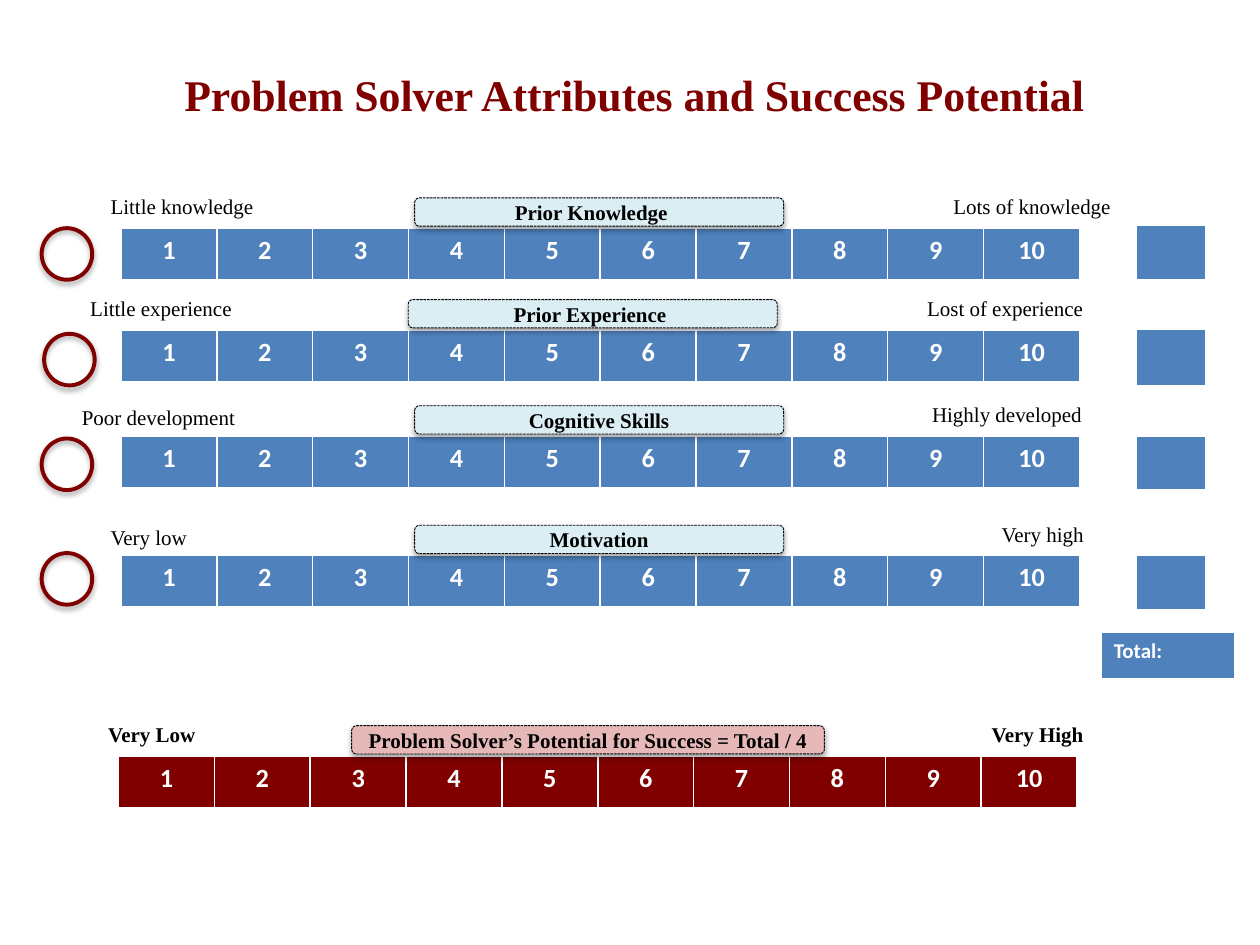
from dataclasses import dataclass
from typing import Optional

from lxml import etree
from pptx import Presentation
from pptx import util as u
from pptx.dml.color import RGBColor
from pptx.enum import dml, shapes, text
from pptx.oxml.ns import qn


@dataclass(frozen=True)
class Theme:
    blue: str = "4F81BD"
    red: str = "800000"
    pale: str = "DBEEF4"
    pink: str = "E6B9B8"
    black: str = "000000"
    white: str = "FFFFFF"
    serif: str = "Times New Roman"
    sans: str = "Calibri"
    title: float = 25
    digit: float = 15
    body: float = 12


@dataclass(frozen=True)
class Label:
    words: str
    left: float
    top: float
    width: float


@dataclass(frozen=True)
class Pill:
    words: str
    left: float = 8.36
    width: float = 7.44
    shift: float = 0


@dataclass(frozen=True)
class Score:
    ring: tuple[float, float]
    top: float
    height: float = 1.09


@dataclass(frozen=True)
class Scale:
    top: float
    pill: Pill
    low: Label
    high: Label
    score: Optional[Score] = None
    left: float = 2.44


LOOK = Theme()

SCALES = [
    Scale(4.6, Pill("Prior Knowledge", shift=0.32),
          Label("Little knowledge", 1.98, 3.78, 3.43),
          Label("Lots of knowledge", 18.97, 3.78, 3.71),
          Score((0.84, 4.6), 4.55)),
    Scale(6.65, Pill("Prior Experience", left=8.23, shift=0.11),
          Label("Little experience", 1.57, 5.84, 3.4),
          Label("Lost of experience", 18.44, 5.84, 3.68),
          Score((0.89, 6.73), 6.63, 1.14)),
    Scale(8.79, Pill("Cognitive Skills"),
          Label("Poor development", 1.4, 8.03, 3.63),
          Label("Highly developed", 18.54, 7.98, 3.58),
          Score((0.84, 8.84), 8.79)),
    Scale(11.2, Pill("Motivation"),
          Label("Very low", 1.98, 10.44, 2.06),
          Label("Very high", 19.94, 10.39, 2.18),
          Score((0.84, 11.15), 11.2)),
]

RESULT = Scale(15.24, Pill("Problem Solver’s Potential for Success = Total / 4", 7.09, 9.53),
               Label("Very Low", 1.93, 14.43, 2.29),
               Label("Very High", 19.74, 14.43, 2.41), left=2.39)


def cm(*sizes: float) -> list[u.Length]:
    return [u.Cm(size) for size in sizes]


def tint(code: str) -> RGBColor:
    return RGBColor.from_string(code)


def write(frame, words: str, *, size: float = LOOK.body, font: str = LOOK.serif,
          color: str = LOOK.black, bold: bool = False,
          align=text.PP_ALIGN.LEFT) -> None:
    line = frame.paragraphs[0]
    line.alignment = align
    run = line.add_run()
    run.text = words
    run.font.size = u.Pt(size)
    run.font.name = font
    run.font.bold = bold
    run.font.color.rgb = tint(color)


def shade(shape) -> None:
    shape.shadow.inherit = False
    effects = shape._element.spPr.find(qn("a:effectLst"))
    outer = etree.SubElement(effects, qn("a:outerShdw"), blurRad="40000",
                             dist="23000", dir="5400000", rotWithShape="0")
    color = etree.SubElement(outer, qn("a:srgbClr"), val=LOOK.black)
    etree.SubElement(color, qn("a:alpha"), val="35000")


def draw_grid(slide, left: float, top: float, width: float, height: float,
              fill: str, words: list[str], **style) -> None:
    grid = slide.shapes.add_table(1, len(words), *cm(left, top, width, height)).table
    for cell, word in zip(grid.rows[0].cells, words):
        cell.fill.solid()
        cell.fill.fore_color.rgb = tint(fill)
        if word:
            write(cell.text_frame, word, font=LOOK.sans, color=LOOK.white,
                  bold=True, **style)


def draw_label(slide, label: Label, bold: bool) -> None:
    box = slide.shapes.add_textbox(*cm(label.left, label.top, label.width, 0.77))
    frame = box.text_frame
    frame.word_wrap = False
    frame.auto_size = text.MSO_AUTO_SIZE.SHAPE_TO_FIT_TEXT
    write(frame, label.words, bold=bold)


def draw_pill(slide, pill: Pill, top: float, fill: str) -> None:
    shape = slide.shapes.add_shape(shapes.MSO_SHAPE.ROUNDED_RECTANGLE,
                                   *cm(pill.left, top, pill.width, 0.57))
    shape.fill.solid()
    shape.fill.fore_color.rgb = tint(fill)
    shape.line.color.rgb = tint(LOOK.black)
    shape.line.width = u.Pt(0.5)
    shape.line.dash_style = dml.MSO_LINE.SQUARE_DOT
    etree.SubElement
    shade(shape)
    frame = shape.text_frame
    frame.word_wrap = True
    frame.vertical_anchor = text.MSO_ANCHOR.MIDDLE
    frame.margin_top = frame.margin_bottom = frame.margin_left = 0
    frame.margin_right = u.Cm(pill.shift)
    write(frame, pill.words, bold=True, align=text.PP_ALIGN.CENTER)


def draw_score(slide, score: Score) -> None:
    draw_grid(slide, 22.91, score.top, 1.4, score.height, LOOK.blue, [""])
    ring = slide.shapes.add_shape(shapes.MSO_SHAPE.OVAL, *cm(*score.ring, 1.02, 1.04))
    ring.fill.background()
    ring.line.color.rgb = tint(LOOK.red)
    ring.line.width = u.Pt(2.25)
    shade(ring)


def draw_scale(slide, scale: Scale, fill: str, cap: str, bold: bool = False) -> None:
    draw_grid(slide, scale.left, scale.top, 19.33, 1.04, fill,
              [str(mark) for mark in range(1, 11)],
              size=LOOK.digit, align=text.PP_ALIGN.CENTER)
    draw_pill(slide, scale.pill, scale.top - 0.61, cap)
    for label in (scale.low, scale.high):
        draw_label(slide, label, bold)
    if scale.score:
        draw_score(slide, scale.score)


def main() -> None:
    deck = Presentation()
    deck.slide_width, deck.slide_height = cm(25.4, 19.05)
    slide = deck.slides.add_slide(deck.slide_layouts[5])
    title = slide.shapes.title
    title.left, title.top, title.width, title.height = cm(3.35, 1.24, 18.87, 1.32)
    title.text_frame.word_wrap = False
    write(title.text_frame, "Problem Solver Attributes and Success Potential",
          size=LOOK.title, color=LOOK.red, bold=True, align=text.PP_ALIGN.CENTER)
    for scale in SCALES:
        draw_scale(slide, scale, LOOK.blue, LOOK.pale)
    draw_grid(slide, 22.2, 12.75, 2.69, 0.94, LOOK.blue, ["Total:"])
    draw_scale(slide, RESULT, LOOK.red, LOOK.pink, bold=True)
    deck.save("out.pptx")


if __name__ == "__main__":
    main()
